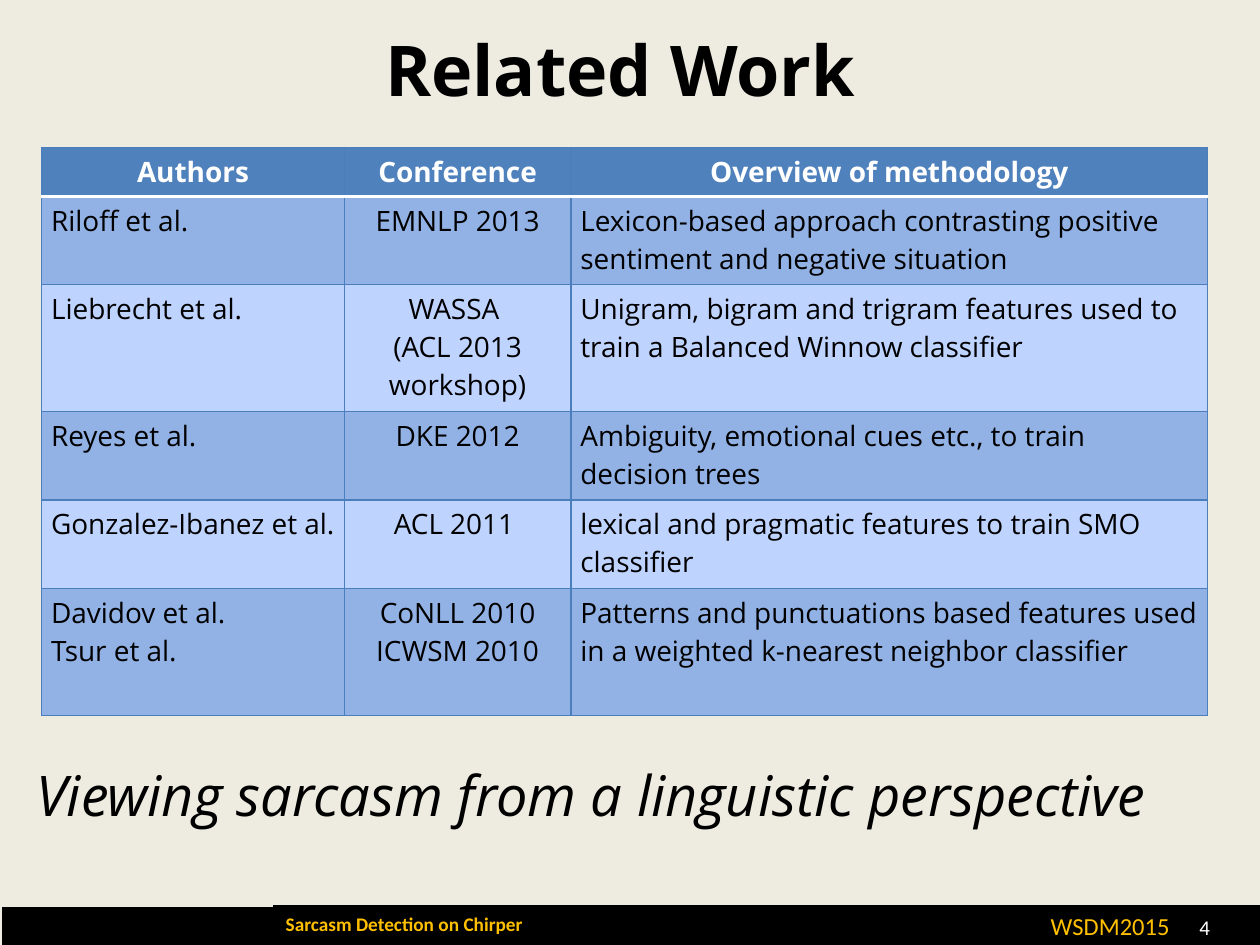
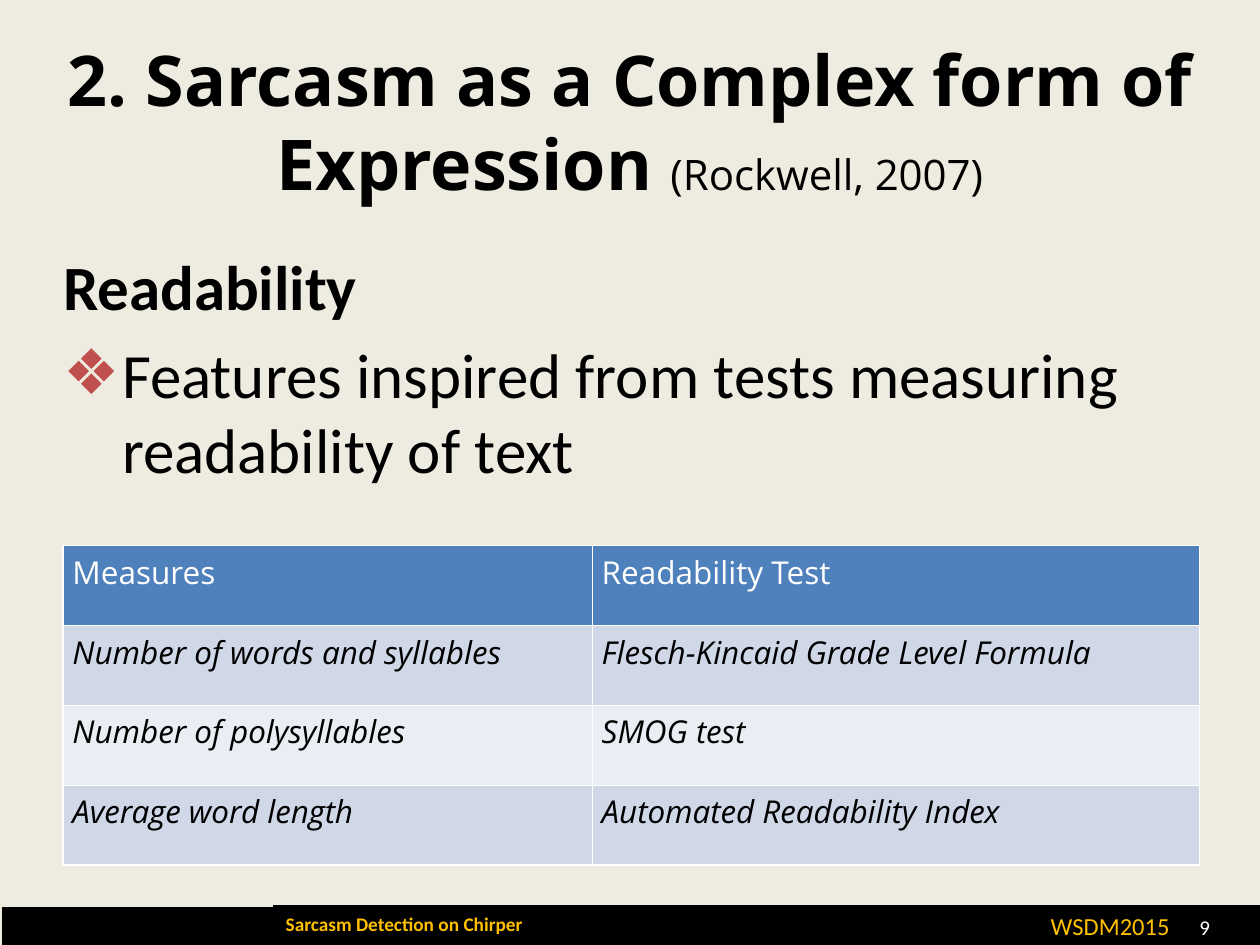
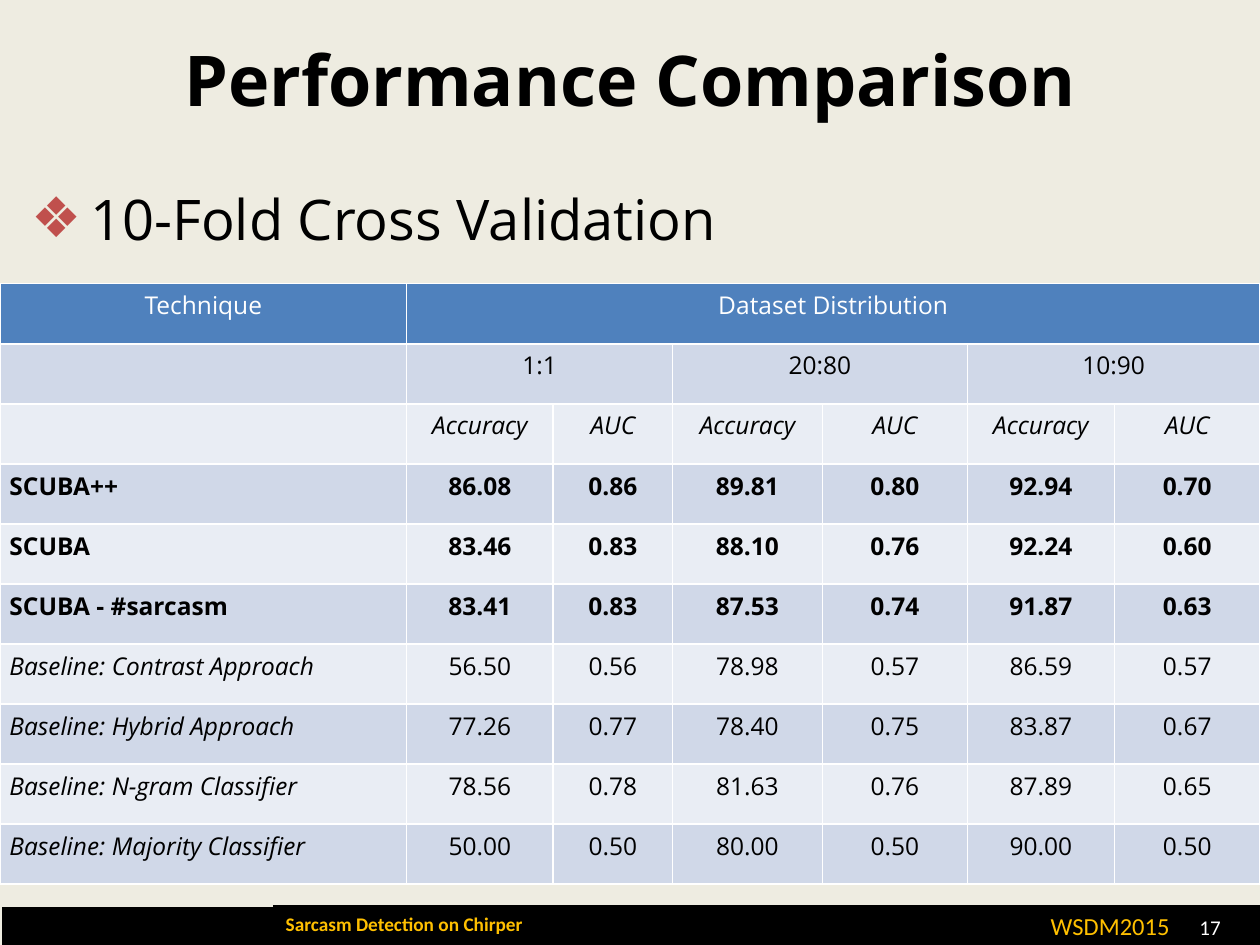
from dataclasses import dataclass, replace

from lxml.etree import SubElement
from pptx import Presentation
from pptx.dml.color import RGBColor
from pptx.enum.shapes import MSO_SHAPE as Shape
from pptx.enum.text import MSO_ANCHOR as Anchor, MSO_AUTO_SIZE as AutoSize, PP_ALIGN as Align
from pptx.oxml.ns import qn
from pptx.util import Cm, Pt


@dataclass(frozen=True)
class Style:
    size: float
    color: str = "000000"
    font: str = "Open Sans"
    bold: bool = False
    italic: bool = False


@dataclass(frozen=True)
class Theme:
    background: str = "EEECE1"
    band: str = "000000"
    bullet: str = "C0504D"
    white: str = "FFFFFF"
    header: str = "4F81BD"
    grid: str = "4B7EBC"
    blue_rows: tuple = ("92B2E5", "BFD3FF")
    pale_rows: tuple = ("D0D8E8", "E9EDF4")
    title: Style = Style(40, bold=True)
    citation: Style = Style(24)
    body: Style = Style(32)
    remark: Style = Style(32, italic=True)
    feature: Style = Style(36, font="Calibri")
    related_cell: Style = Style(16)
    measure_cell: Style = Style(18)
    result_cell: Style = Style(14)
    talk: Style = Style(11, "FFC000", "Calibri", bold=True)
    venue: Style = Style(14, "FFC000", "Calibri")
    number: Style = Style(12, "FFFFFF", "Calibri")


THEME = Theme()


def rgb(color):
    return RGBColor.from_string(color)


def place(shape, box):
    shape.left, shape.top, shape.width, shape.height = map(Cm, box)


class Deck:
    def __init__(self, theme):
        self.theme = theme
        self.presentation = Presentation()
        self.presentation.slide_width, self.presentation.slide_height = Cm(25.4), Cm(19.05)
        fill = self.presentation.slide_master.background.fill
        fill.solid()
        fill.fore_color.rgb = rgb(theme.background)
        self.layout = self.presentation.slide_layouts[1]
        self.slide = None

    def start(self, number):
        first = self.slide is None
        self.slide = self.presentation.slides.add_slide(self.layout)
        if first:
            self.footer_bands()
        box = self.slide.shapes.add_textbox(*map(Cm, (23.93, 18.31, 1.52, 0.76)))
        box.text_frame.word_wrap = True
        self.add_runs(box.text_frame.paragraphs[0], [(number, self.theme.number)])

    def footer_bands(self):
        theme = self.theme
        bands = [
            ((0.05, 18.29, 6.35, 0.76), [], Anchor.TOP, Align.LEFT),
            ((5.51, 18.26, 20.73, 0.79),
             [("Sarcasm Detection on Chirper", theme.talk)], Anchor.TOP, Align.LEFT),
            ((23.83, 18.29, 1.47, 0.76), [], Anchor.TOP, Align.LEFT),
            ((13.67, 18.29, 10.16, 0.76), [("WSDM2015", theme.venue)], Anchor.MIDDLE, Align.RIGHT),
        ]
        for index, (box, runs, anchor, align) in enumerate(bands):
            shape = self.slide.shapes.add_shape(Shape.RECTANGLE, *map(Cm, box))
            shape.shadow.inherit = False
            shape.fill.solid()
            shape.fill.fore_color.rgb = rgb(theme.band)
            shape.line.color.rgb = rgb(theme.band)
            shape.line.width = Pt(0.75)
            shape.text_frame.vertical_anchor = anchor
            self.add_runs(shape.text_frame.paragraphs[0], runs, align)
            shape.element.nvSpPr.cNvPr.id = 100 + index
            self.layout.shapes.element.append(shape.element)

    def add_runs(self, paragraph, runs, align=Align.LEFT):
        paragraph.alignment = align
        for text, style in runs:
            run = paragraph.add_run()
            run.text = text
            font = run.font
            font.name, font.size = style.font, Pt(style.size)
            font.bold, font.italic = style.bold, style.italic
            font.color.rgb = rgb(style.color)

    def frame(self, shape, box):
        place(shape, box)
        frame = shape.text_frame
        frame.word_wrap = True
        frame.auto_size = AutoSize.NONE
        frame.vertical_anchor = Anchor.TOP
        frame.margin_left = frame.margin_right = Cm(0.2)
        frame.margin_top = frame.margin_bottom = Cm(0.1)
        return frame

    def title(self, box, *runs):
        frame = self.frame(self.slide.shapes.title, box)
        self.add_runs(frame.paragraphs[0], runs, Align.CENTER)

    def body(self, box, *items):
        frame = self.frame(self.slide.placeholders[1], box)
        for index, (text, style, bulleted) in enumerate(items):
            paragraph = frame.add_paragraph() if index else frame.paragraphs[0]
            self.bullet(paragraph, bulleted)
            paragraph.space_before = Pt(style.size * 0.2 if index else 0)
            self.add_runs(paragraph, [(text, style)])

    def bullet(self, paragraph, bulleted):
        properties = paragraph._p.get_or_add_pPr()
        indent = Cm(1.19) if bulleted else 0
        properties.set("marL", str(indent))
        properties.set("indent", str(-indent))
        if bulleted:
            color = SubElement(properties, qn("a:buClr"))
            SubElement(color, qn("a:srgbClr"), val=self.theme.bullet)
            SubElement(properties, qn("a:buChar"), char="❖")
        else:
            SubElement(properties, qn("a:buNone"))

    def border(self, cell, side, color, width):
        line = SubElement(cell._tc.get_or_add_tcPr(), qn(f"a:ln{side}"), w=str(Pt(width)))
        fill = SubElement(line, qn("a:solidFill"))
        SubElement(fill, qn("a:srgbClr"), val=color)

    def table(self, corner, widths, heights, rows, look, fills, grid, rule, merges=()):
        size = sum(widths), sum(heights)
        table = self.slide.shapes.add_table(
            len(rows), len(widths), *map(Cm, corner + size)).table
        table.first_row = table.horz_banding = False
        for column, width in zip(table.columns, widths):
            column.width = Cm(width)
        for row, height in zip(table.rows, heights):
            row.height = Cm(height)
        for r, texts in enumerate(rows):
            for c, text in enumerate(texts):
                cell = table.cell(r, c)
                cell.margin_left = cell.margin_right = Cm(0.19)
                cell.margin_top = cell.margin_bottom = Cm(0.1)
                for side in "LRTB":
                    ruled = (r, side) in ((0, "B"), (1, "T"))
                    self.border(cell, side, *(rule if ruled else grid))
                cell.fill.solid()
                cell.fill.fore_color.rgb = rgb(fills[(r - 1) % 2] if r else self.theme.header)
                style, align = look(r, c)
                if r == 0:
                    style = replace(style, color=self.theme.white)
                for index, line in enumerate(text.split("\n") if text else []):
                    frame = cell.text_frame
                    paragraph = frame.add_paragraph() if index else frame.paragraphs[0]
                    self.add_runs(paragraph, [(line, style)], align)
        for r, first, last in merges:
            table.cell(r, first).merge(table.cell(r, last))


def related_work(deck):
    theme = deck.theme
    deck.start("4")
    deck.title((1.07, 0.43, 22.86, 2.54), ("Related Work", theme.title))
    deck.body((0.53, 15.24, 24.77, 2.44),
              ("Viewing sarcasm from a linguistic perspective", theme.remark, False))
    rows = [
        ("Authors", "Conference", "Overview of methodology"),
        ("Riloff et al.", "EMNLP 2013",
         "Lexicon-based approach contrasting positive sentiment and negative situation"),
        ("Liebrecht et al.", "WASSA \n(ACL 2013 workshop)",
         "Unigram, bigram and trigram features used to train a Balanced Winnow classifier"),
        ("Reyes et al.", "DKE 2012", "Ambiguity, emotional cues etc., to train decision trees"),
        ("Gonzalez-Ibanez et al.", "ACL 2011 ",
         "lexical and pragmatic features to train SMO classifier"),
        ("Davidov et al.\nTsur et al.", "CoNLL 2010\nICWSM 2010",
         "Patterns and punctuations based features used in a weighted "
         "k-nearest neighbor classifier"),
    ]

    def look(row, column):
        centred = row == 0 or column == 1
        return replace(theme.related_cell, bold=row == 0), Align.CENTER if centred else Align.LEFT

    deck.table((0.84, 2.97), (6.1, 4.57, 12.83), (0.99, 1.78, 2.56, 1.78, 1.78, 2.56),
               rows, look, theme.blue_rows, (theme.grid, 0.75), (theme.white, 2))


def readability(deck):
    theme = deck.theme
    deck.start("9")
    deck.title((0, 0.64, 25.4, 4.24),
               ("2. Sarcasm as a Complex form of Expression ", theme.title),
               ("(Rockwell, 2007)", theme.citation))
    deck.body((1.07, 4.88, 23.5, 12.57),
              ("Readability", replace(theme.feature, bold=True), False),
              ("Features inspired from tests measuring readability of text", theme.feature, True))
    rows = [
        ("Measures", "Readability Test"),
        ("Number of words and syllables", "Flesch-Kincaid Grade Level Formula"),
        ("Number of polysyllables", "SMOG test"),
        ("Average word length", "Automated Readability Index"),
    ]

    def look(row, column):
        return replace(theme.measure_cell, italic=row > 0), Align.LEFT

    white_line = (theme.white, 1)
    deck.table((1.27, 11), (10.67, 12.24), [1.61] * len(rows),
               rows, look, theme.pale_rows, white_line, white_line)


def performance(deck):
    theme = deck.theme
    deck.start("17")
    deck.title((1.27, 0.64, 22.86, 3.18), ("Performance Comparison", theme.title))
    deck.body((0.43, 3.61, 22.86, 12.57), ("10-Fold Cross Validation", theme.body, True))
    rows = [
        ("Technique", "Dataset Distribution", "", "", "", "", ""),
        ("", "1:1", "", "20:80", "", "10:90", ""),
        ("",) + ("Accuracy", "AUC") * 3,
        ("SCUBA++", "86.08", "0.86", "89.81", "0.80", "92.94", "0.70"),
        ("SCUBA", "83.46", "0.83", "88.10", "0.76", "92.24", "0.60"),
        ("SCUBA - #sarcasm", "83.41", "0.83", "87.53", "0.74", "91.87", "0.63"),
        ("Baseline: Contrast Approach", "56.50", "0.56", "78.98", "0.57", "86.59", "0.57"),
        ("Baseline: Hybrid Approach", "77.26", "0.77", "78.40", "0.75", "83.87", "0.67"),
        ("Baseline: N-gram Classifier", "78.56", "0.78", "81.63", "0.76", "87.89", "0.65"),
        ("Baseline: Majority Classifier", "50.00", "0.50", "80.00", "0.50", "90.00", "0.50"),
    ]

    def look(row, column):
        italic = row == 2 or (row > 5 and column == 0)
        style = replace(theme.result_cell, bold=3 <= row <= 5, italic=italic)
        return style, Align.CENTER if row == 0 or column else Align.LEFT

    white_line = (theme.white, 1)
    merges = [(0, 1, 6)] + [(1, first, first + 1) for first in (1, 3, 5)]
    deck.table((0, 5.72), (8.2, 2.95, 2.41, 3.02, 2.92, 2.97, 2.93), [1.21] * len(rows),
               rows, look, theme.pale_rows, white_line, white_line, merges)


def main():
    deck = Deck(THEME)
    related_work(deck)
    readability(deck)
    performance(deck)
    deck.presentation.save("out.pptx")


if __name__ == "__main__":
    main()
